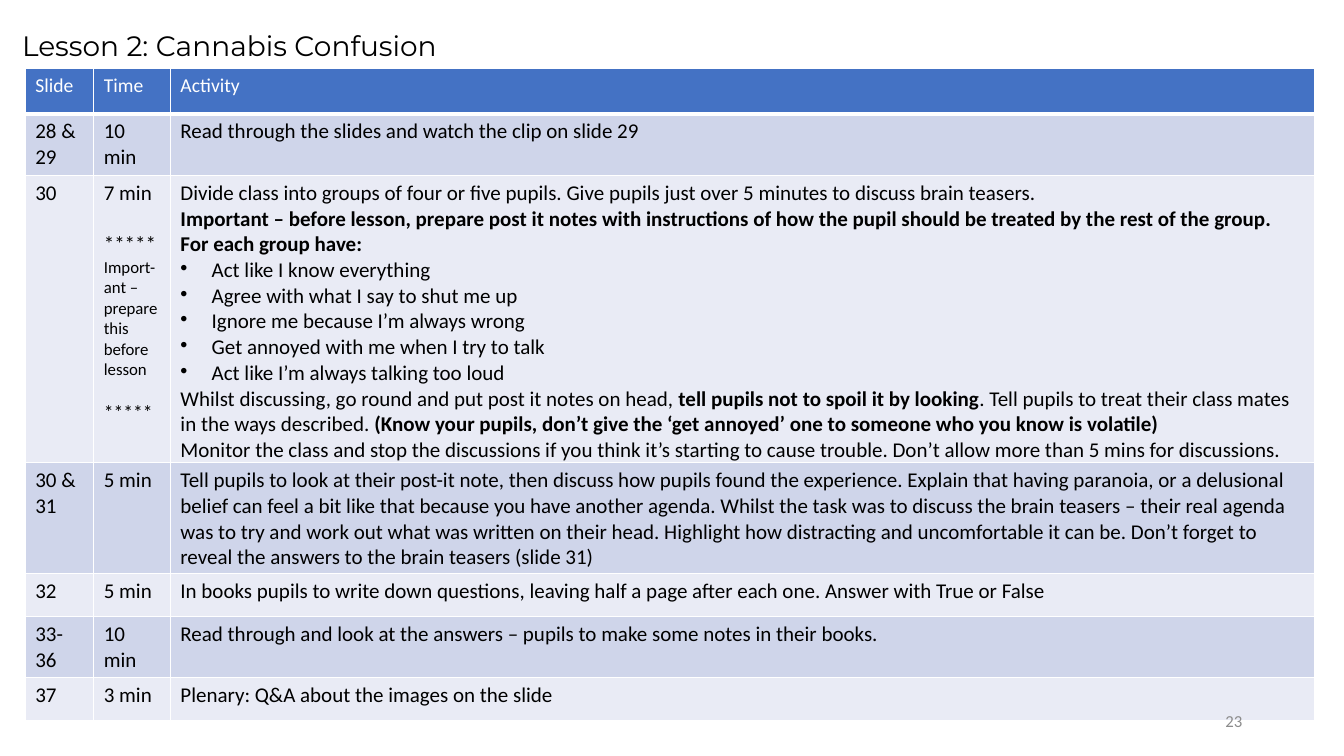
from lxml import etree
from pptx import Presentation
from pptx.dml.color import RGBColor
from pptx.enum.text import MSO_ANCHOR, PP_ALIGN
from pptx.oxml.ns import qn
from pptx.util import Inches, Pt

LEFT, RIGHT = PP_ALIGN.LEFT, PP_ALIGN.RIGHT
TOP, MIDDLE = MSO_ANCHOR.TOP, MSO_ANCHOR.MIDDLE

BODY_FONT, TITLE_FONT = "Calibri", "Montserrat"
BLACK, WHITE, GREY = "000000", "FFFFFF", "8C8C8C"
HEADER_FILL, BANDS = "4472C4", ("CFD5EA", "E9EBF5")

COLUMN_WIDTHS = (0.68, 0.76, 11.35)
ROW_HEIGHTS = (0.45, 0.61, 2.85, 1.1, 0.43, 0.6, 0.43)
FULL_ROW = 2  # text fills this row down to its lower edge


def color(code):
    return RGBColor.from_string(code)


def para(*spans, **style):
    """A paragraph: plain strings, or (string,) for a bold span."""
    return spans, style


ROLES = ("Act like I know everything", "Agree with what I say to shut me up",
         "Ignore me because I’m always wrong",
         "Get annoyed with me when I try to talk",
         "Act like I’m always talking too loud")

GROUP_TIME = [
    para("7 min"),
    para("*****", before=18.3),
    para("Import-ant – prepare this before lesson", size=12),
    para("*****", size=14, before=14.6),
]

GROUP_ACTIVITY = [
    para("Divide class into groups of four or five pupils. Give pupils just "
         "over 5 minutes to discuss brain teasers."),
    para(("Important – before lesson, prepare post it notes with instructions "
          "of how the pupil should be treated by the rest of the group. "
          "For each group have:",)),
    *[para(role, bullet=True) for role in ROLES],
    para("Whilst discussing, go round and put post it notes on head, ",
         ("tell pupils not to spoil it by looking",),
         ". Tell pupils to treat their class mates in the ways described. ",
         ("(Know your pupils, don’t give the ‘get annoyed’ one to someone who "
          "you know is volatile)",)),
    para("Monitor the class and stop the discussions if you think it’s "
         "starting to cause trouble. Don’t allow more than 5 mins for "
         "discussions."),
]

EXPERIENCE = (
    "Tell pupils to look at their post-it note, then discuss how pupils found "
    "the experience. Explain that having paranoia, or a delusional belief can "
    "feel a bit like that because you have another agenda. Whilst the task was "
    "to discuss the brain teasers – their real agenda was to try and work out "
    "what was written on their head. Highlight how distracting and "
    "uncomfortable it can be. Don’t forget to reveal the answers to the brain "
    "teasers (slide 31)")

LESSON = (
    ("Slide", "Time", "Activity"),
    ("28 & 29", "10 min",
     "Read through the slides and watch the clip on slide 29"),
    ("30", GROUP_TIME, GROUP_ACTIVITY),
    ("30 & 31", "5 min", EXPERIENCE),
    ("32", "5 min", "In books pupils to write down questions, leaving half a "
                    "page after each one. Answer with True or False"),
    ("33-36", "10 min", "Read through and look at the answers – pupils to "
                        "make some notes in their books."),
    ("37", "3 min", "Plenary: Q&A about the images on the slide"),
)


class LessonPage:
    def __init__(self, page, font=BODY_FONT):
        self.page = page
        self.font = font

    def fill_text(self, frame, content, size, ink, font=None, align=LEFT):
        paras = [para(content)] if isinstance(content, str) else content
        for index, (spans, style) in enumerate(paras):
            paragraph = frame.add_paragraph() if index else frame.paragraphs[0]
            paragraph.alignment = align
            paragraph.font.name = font or self.font
            paragraph.font.size = Pt(style.get("size", size))
            paragraph.font.color.rgb = color(ink)
            if "before" in style:
                paragraph.space_before = Pt(style["before"])
            if style.get("bullet"):
                self.bullet(paragraph)
            for span in spans:
                run = paragraph.add_run()
                run.text = span if isinstance(span, str) else span[0]
                run.font.bold = not isinstance(span, str)

    def bullet(self, paragraph):
        properties = paragraph._p.get_or_add_pPr()
        properties.set("marL", str(Inches(0.31)))
        properties.set("indent", str(-Inches(0.31)))
        mark = etree.Element(qn("a:buChar"), char="•")
        properties.insert_element_before(mark, "a:tabLst", "a:defRPr", "a:extLst")

    def text(self, place, content, size, ink, font=None, align=LEFT, anchor=TOP):
        box = self.page.shapes.add_textbox(*map(Inches, place))
        box.text_frame.word_wrap = True
        box.text_frame.vertical_anchor = anchor
        self.fill_text(box.text_frame, content, size, ink, font, align)

    def borders(self, cell, bottom):
        properties = cell._tc.get_or_add_tcPr()
        for side, width in (("L", 1), ("R", 1), ("T", 1), ("B", bottom)):
            line = etree.SubElement(properties, qn("a:ln" + side), w=str(Pt(width)))
            fill = etree.SubElement(line, qn("a:solidFill"))
            etree.SubElement(fill, qn("a:srgbClr"), val=WHITE)

    def table(self, left, top, rows, widths, heights):
        frame = self.page.shapes.add_table(
            len(rows), len(widths), Inches(left), Inches(top),
            Inches(sum(widths)), Inches(sum(heights)))
        table = frame.table
        table.first_row = table.horz_banding = False
        for column, width in zip(table.columns, widths):
            column.width = Inches(width)
        for r, (contents, height) in enumerate(zip(rows, heights)):
            table.rows[r].height = Inches(height)
            for c, content in enumerate(contents):
                cell = table.cell(r, c)
                self.borders(cell, 1 if r else 3)
                cell.fill.solid()
                cell.fill.fore_color.rgb = color(
                    BANDS[(r - 1) % 2] if r else HEADER_FILL)
                if r == FULL_ROW:
                    cell.margin_bottom = 0
                self.fill_text(cell.text_frame, content,
                               15 if r else 14, BLACK if r else WHITE)


def main():
    deck = Presentation()
    deck.slide_width, deck.slide_height = Inches(13.33), Inches(7.5)
    lesson = LessonPage(deck.slides.add_slide(deck.slide_layouts[6]))

    # Title
    lesson.text((0.12, 0.23, 6.71, 0.44), "Lesson 2: Cannabis Confusion",
                20, BLACK, font=TITLE_FONT)
    # Lesson plan
    lesson.table(0.25, 0.68, LESSON, COLUMN_WIDTHS, ROW_HEIGHTS)
    # Page number
    lesson.text((9.42, 6.95, 3, 0.4), "23", 12, GREY, align=RIGHT, anchor=MIDDLE)

    deck.save("out.pptx")


if __name__ == "__main__":
    main()
